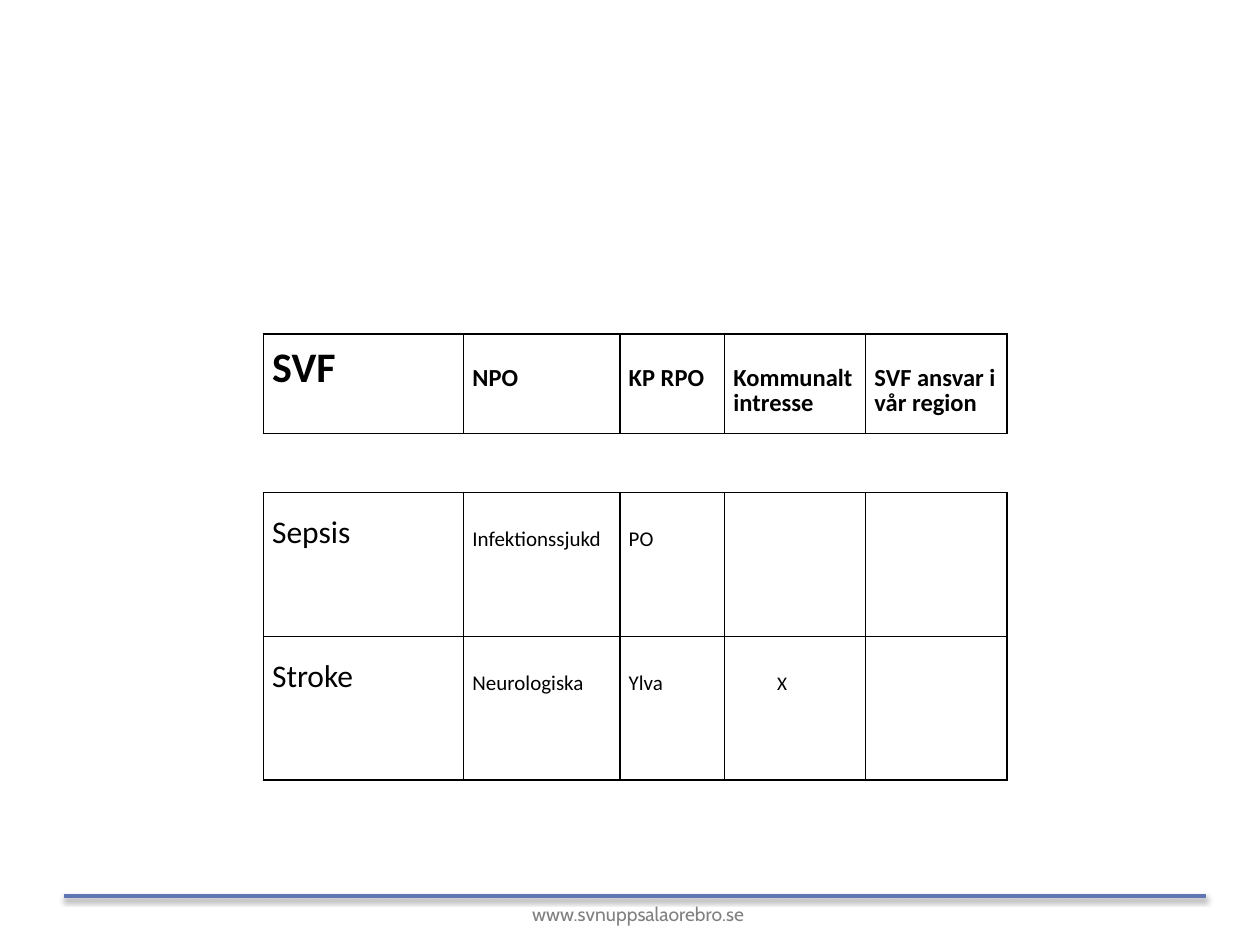
import pptx
import pptx.util
import pptx.dml.color
import pptx.enum.shapes
import pptx.enum.text
import pptx.oxml
import pptx.oxml.ns

Pt = pptx.util.Pt
COLORS = {"rule": "6076B4", "footer": "808080", "ink": "000000"}
NS = pptx.oxml.ns.nsdecls("a")
COLUMNS = [114.5, 89.3, 59.8, 80.65, 80.65]
HEADINGS = [["SVF", "NPO", "KP RPO", "Kommunalt intresse", "SVF ansvar i vår region"]]
PATHWAYS = [
    ["Sepsis", "Infektionssjukd", "PO", "", ""],
    ["Stroke", "Neurologiska", "Ylva", "X", ""],
]


def rgb(name):
    return pptx.dml.color.RGBColor.from_string(COLORS[name])


def add_run(p, text, font, size, color, bold=False):
    r = p.add_run()
    r.text = text
    r.font.name = font
    r.font.size = Pt(size)
    r.font.bold = bold
    r.font.color.rgb = rgb(color)


def border_cell(cell):
    tcPr = cell._tc.get_or_add_tcPr()
    for i, side in enumerate("LRTB"):
        tcPr.insert(i, pptx.oxml.parse_xml(
            f'<a:ln{side} {NS} w="{Pt(1)}"><a:solidFill>'
            f'<a:srgbClr val="{COLORS["ink"]}"/></a:solidFill></a:ln{side}>'))


def add_grid(s, left, top, row_height, rows, sizes, bold=False):
    tbl = s.shapes.add_table(len(rows), len(COLUMNS), Pt(left), Pt(top),
                             Pt(sum(COLUMNS)), Pt(row_height * len(rows))).table
    tbl.first_row = tbl.horz_banding = False
    for col, width in zip(tbl.columns, COLUMNS):
        col.width = Pt(width)
    for i, row in enumerate(rows):
        tbl.rows[i].height = Pt(row_height)
        for j, text in enumerate(row):
            cell = tbl.cell(i, j)
            cell.fill.background()
            border_cell(cell)
            cell.margin_left = Pt(30 if text == "X" else 5)
            cell.margin_right = Pt(5)
            cell.margin_top = Pt(20)
            cell.margin_bottom = 0
            if text:
                p = cell.text_frame.paragraphs[0]
                p.line_spacing = Pt(14)
                p.space_after = Pt(6)
                add_run(p, text, "Calibri", sizes[j], "ink", bold)


def add_footer(s, left, top, width, height):
    rule = s.shapes.add_connector(pptx.enum.shapes.MSO_CONNECTOR.STRAIGHT,
                                  Pt(left), Pt(top), Pt(left + width), Pt(top))
    rule.line.color.rgb = rgb("rule")
    rule.line.width = Pt(2.25)
    rule._element.spPr.append(pptx.oxml.parse_xml(
        f'<a:effectLst {NS}><a:outerShdw blurRad="{Pt(3.1)}" dist="{Pt(1.6)}" '
        f'dir="5400000" rotWithShape="0"><a:srgbClr val="{COLORS["ink"]}">'
        '<a:alpha val="38000"/></a:srgbClr></a:outerShdw></a:effectLst>'))
    sp = s.shapes.add_textbox(Pt(left + 190), Pt(top + 2), Pt(276), Pt(height - 2))
    tf = sp.text_frame
    tf.word_wrap = True
    tf.margin_top = tf.margin_bottom = 0
    tf.vertical_anchor = pptx.enum.text.MSO_ANCHOR.MIDDLE
    p = tf.paragraphs[0]
    p.alignment = pptx.enum.text.PP_ALIGN.CENTER
    add_run(p, "www.svnuppsalaorebro.se", "Cabin", 11, "footer")


def main():
    prs = pptx.Presentation()
    prs.slide_width, prs.slide_height = Pt(720), Pt(540)
    s = prs.slides.add_slide(prs.slide_layouts[6])
    add_footer(s, 36.7, 512, 652.3, 18)
    add_grid(s, 150.5, 281.5, 82.1, PATHWAYS, [18, 12, 12, 11, 11])
    add_grid(s, 150.5, 190.8, 56.9, HEADINGS, [24, 14, 14, 14, 14], bold=True)
    prs.save("out.pptx")


if __name__ == "__main__":
    main()
